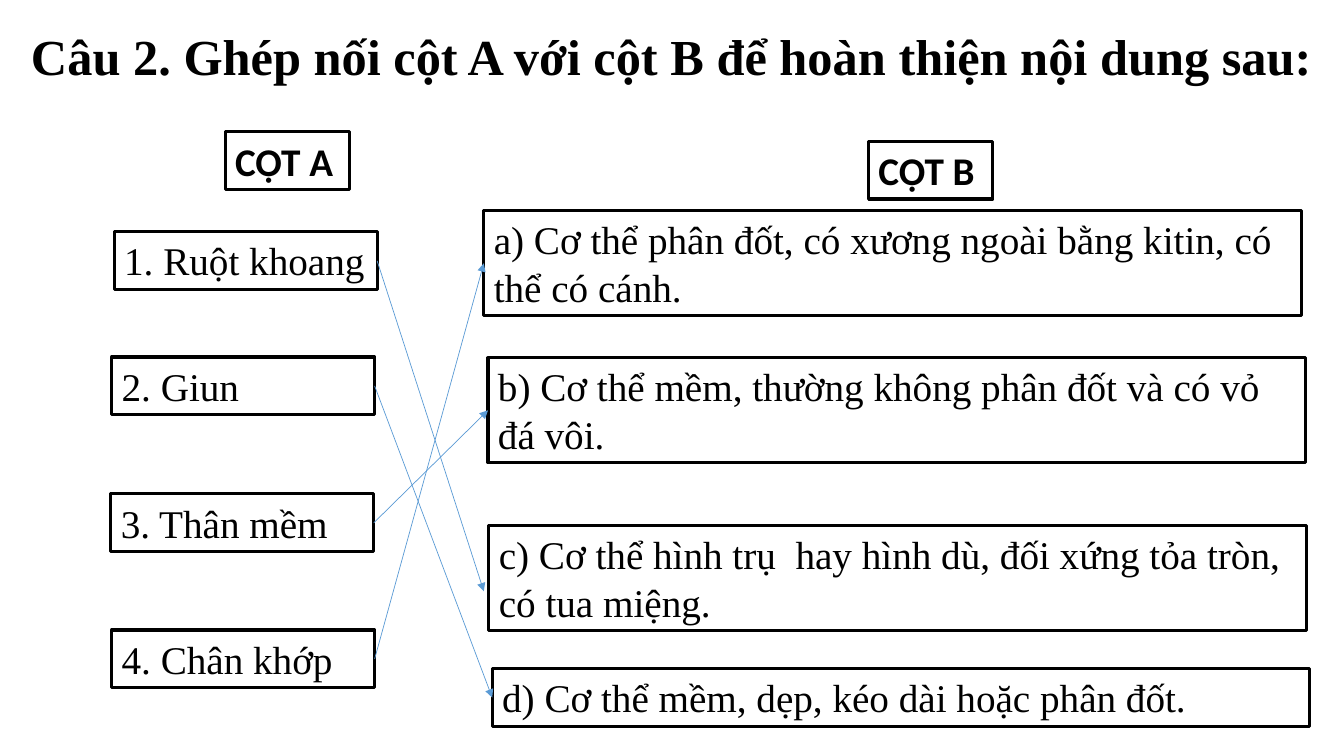
from dataclasses import dataclass

from lxml.etree import SubElement
from pptx import Presentation
from pptx.dml.color import RGBColor
from pptx.enum.shapes import MSO_CONNECTOR as ConnectorKind
from pptx.enum.text import MSO_AUTO_SIZE as AutoSize
from pptx.oxml.ns import qn
from pptx.shapes.autoshape import Shape
from pptx.slide import Slide
from pptx.util import Inches, Pt

COLORS = {"ink": "000000", "arrow": "5B9BD5"}
SERIF = "Times New Roman"
SANS = "Calibri"
CELL = Inches(13.333) / 16
ONE_LINE = 0.69
TWO_LINES = 1.25
RIGHT_SIDE, LEFT_SIDE = 3, 1


@dataclass
class Label:
    text: str
    column: float
    row: float
    width: float
    height: float = ONE_LINE
    font: str = SERIF
    size: int = 28
    bold: bool = False
    framed: bool = True


@dataclass
class Match:
    item: str
    answer: str
    end_column: float = 0
    end_row: float = 0


ITEM_WIDTH, ANSWER_WIDTH, HEADER_WIDTH = 3.13, 9.73, 1.48

HEADERS = [
    Label("CỘT A", 2.68, 1.57, HEADER_WIDTH, font=SANS, bold=True),
    Label("CỘT B", 10.34, 1.68, HEADER_WIDTH, font=SANS, bold=True),
]
CHOICES = {
    "1": Label("1. Ruột khoang", 1.36, 2.76, ITEM_WIDTH),
    "2": Label("2. Giun", 1.33, 4.25, ITEM_WIDTH),
    "3": Label("3. Thân mềm", 1.32, 5.88, ITEM_WIDTH),
    "4": Label("4. Chân khớp", 1.33, 7.5, ITEM_WIDTH),
    "a": Label("a) Cơ thể phân đốt, có xương ngoài bằng kitin, có thể có cánh.",
               5.76, 2.51, ANSWER_WIDTH, TWO_LINES),
    "b": Label("b) Cơ thể mềm, thường không phân đốt và có vỏ đá vôi.",
               5.81, 4.26, ANSWER_WIDTH, TWO_LINES),
    "c": Label("c) Cơ thể hình trụ  hay hình dù, đối xứng tỏa tròn, có tua miệng.",
               5.82, 6.26, ANSWER_WIDTH, TWO_LINES),
    "d": Label("d) Cơ thể mềm, dẹp, kéo dài hoặc phân đốt.", 5.86, 7.96, ANSWER_WIDTH),
}
MATCHES = [
    Match("1", "", 5.76, 7.04),
    Match("3", "b"),
    Match("4", "a"),
    Match("2", "d"),
]
TITLE = Label("Câu 2. Ghép nối cột A với cột B để hoàn thiện nội dung sau:",
              0.25, 0.24, 15.55, 0.85, size=36, bold=True, framed=False)


def grid(cells: float) -> int:
    return round(cells * CELL)


def color(name: str) -> RGBColor:
    return RGBColor.from_string(COLORS[name])


def draw_label(page: Slide, label: Label) -> Shape:
    box = page.shapes.add_textbox(grid(label.column), grid(label.row),
                                  grid(label.width), grid(label.height))
    if label.framed:
        box.line.color.rgb = color("ink")
        box.line.width = Pt(2.25)
    frame = box.text_frame
    frame.word_wrap = True
    frame.auto_size = AutoSize.SHAPE_TO_FIT_TEXT
    frame.text = label.text
    font = frame.paragraphs[0].runs[0].font
    font.name = label.font
    font.size = Pt(label.size)
    font.bold = label.bold
    font.color.rgb = color("ink")
    return box


def draw_match(page: Slide, match: Match, boxes: dict[str, Shape]) -> None:
    arrow = page.shapes.add_connector(ConnectorKind.STRAIGHT, 0, 0,
                                      grid(match.end_column), grid(match.end_row))
    arrow.begin_connect(boxes[match.item], RIGHT_SIDE)
    if match.answer:
        arrow.end_connect(boxes[match.answer], LEFT_SIDE)
    arrow.line.color.rgb = color("arrow")
    arrow.line.width = Pt(0.5)
    SubElement(arrow.line._get_or_add_ln(), qn("a:tailEnd"), type="triangle")
    SubElement(arrow._element.spPr, qn("a:effectLst"))


def main() -> None:
    deck = Presentation()
    deck.slide_width = Inches(13.333)
    deck.slide_height = Inches(7.5)
    page = deck.slides.add_slide(deck.slide_layouts[6])
    for header in HEADERS:
        draw_label(page, header)
    boxes = {key: draw_label(page, choice) for key, choice in CHOICES.items()}
    for match in MATCHES:
        draw_match(page, match, boxes)
    draw_label(page, TITLE)
    deck.save("out.pptx")


if __name__ == "__main__":
    main()
